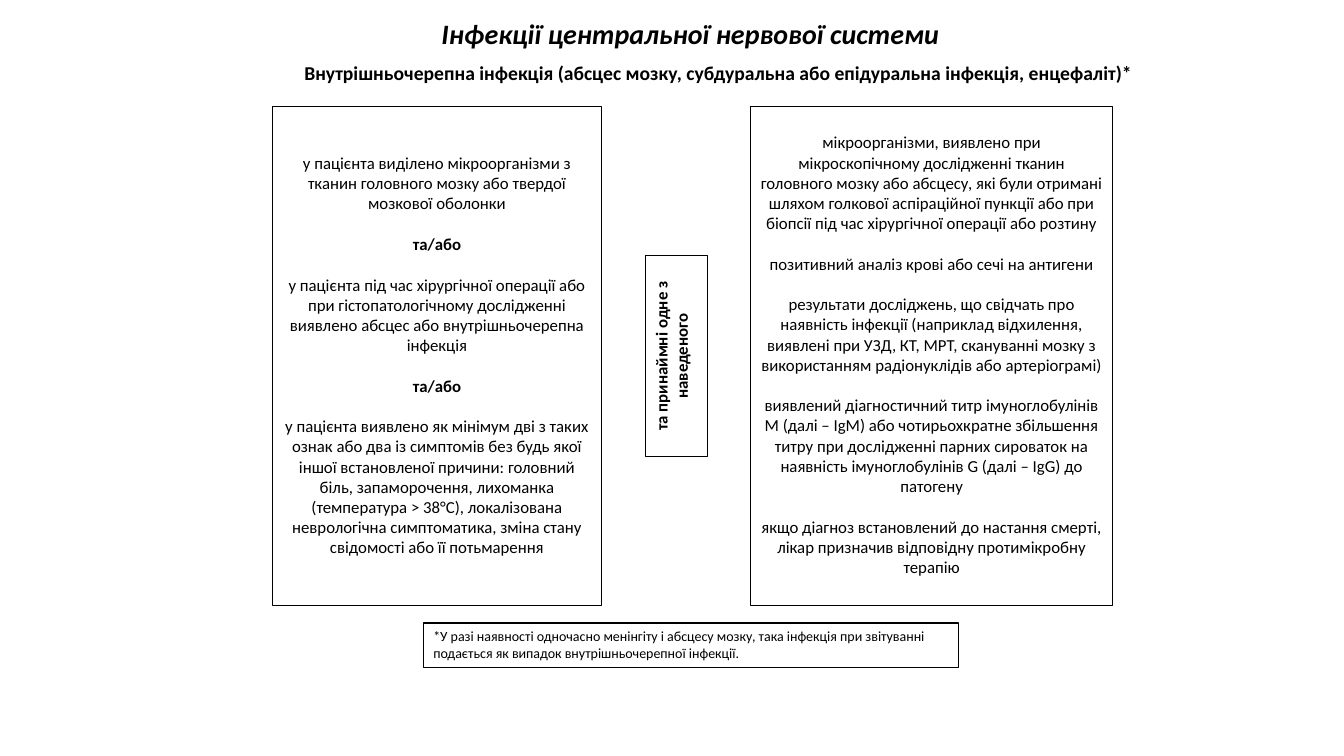
import pptx
import pptx.dml.color
import pptx.enum.shapes
import pptx.enum.text
import pptx.util

Cm = pptx.util.Cm
Pt = pptx.util.Pt
ALIGN = pptx.enum.text.PP_ALIGN
BLACK = pptx.dml.color.RGBColor(0, 0, 0)
FONT = "Calibri"
AND_OR = "та/або"
COLUMN_TOP, COLUMN_HEIGHT = 2.69, 12.57

PATIENT_CRITERIA = [
    "у пацієнта виділено мікроорганізми з тканин головного мозку або твердої мозкової оболонки",
    AND_OR,
    "у пацієнта під час хірургічної операції або при гістопатологічному дослідженні "
    "виявлено абсцес або внутрішньочерепна інфекція",
    AND_OR,
    "у пацієнта виявлено як мінімум дві з таких ознак або два із симптомів без будь якої "
    "іншої встановленої причини: головний біль, запаморочення, лихоманка "
    "(температура > 38°С), локалізована неврологічна симптоматика, зміна стану "
    "свідомості або її потьмарення",
]
LAB_CRITERIA = [
    "мікроорганізми, виявлено при мікроскопічному дослідженні тканин головного мозку або "
    "абсцесу, які були отримані шляхом голкової аспіраційної пункції або при біопсії під час "
    "хірургічної операції або розтину",
    "позитивний аналіз крові або сечі на антигени",
    "результати досліджень, що свідчать про наявність інфекції (наприклад відхилення, "
    "виявлені при УЗД, КТ, МРТ, скануванні мозку з використанням радіонуклідів або артеріограмі)",
    "виявлений діагностичний титр імуноглобулінів М (далі – IgM) або чотирьохкратне "
    "збільшення титру при дослідженні парних сироваток на наявність імуноглобулінів G "
    "(далі – IgG) до патогену",
    "якщо діагноз встановлений до настання смерті, лікар призначив відповідну "
    "протимікробну терапію",
]
LINK = "та принаймні одне з наведеного"
TITLE = "Інфекції центральної нервової системи"
SUBTITLE = ("Внутрішньочерепна інфекція (абсцес мозку, субдуральна або епідуральна "
            "інфекція, енцефаліт)*")
FOOTNOTE = ("*У разі наявності одночасно менінгіту і абсцесу мозку, така інфекція при "
            "звітуванні подається як випадок внутрішньочерепної інфекції.")


def write(box, texts, size, bold=False, italic=False, align=ALIGN.CENTER):
    """Fill the box with paragraphs one line apart."""
    frame = box.text_frame
    frame.word_wrap = True
    frame.vertical_anchor = pptx.enum.text.MSO_ANCHOR.TOP
    frame.text = "\n".join(texts)
    for index, para in enumerate(frame.paragraphs):
        para.alignment = align
        if index:
            para.space_before = Pt(14.6)
        font = para.runs[0].font
        font.name = FONT
        font.size = Pt(size)
        font.bold = bold or para.text == AND_OR
        font.italic = italic
        font.color.rgb = BLACK


def add_frame(left, top, width, height):
    """Add an unfilled rectangle with a thin black outline."""
    box = page.shapes.add_shape(pptx.enum.shapes.MSO_SHAPE.RECTANGLE,
                                Cm(left), Cm(top), Cm(width), Cm(height))
    box.shadow.inherit = False
    box.fill.background()
    box.line.color.rgb = BLACK
    box.line.width = Pt(0.75)
    return box


deck = pptx.Presentation()
deck.slide_width = Cm(33.87)
deck.slide_height = Cm(19.05)
page = deck.slides.add_slide(deck.slide_layouts[6])

for left, width, inset, criteria in [
    (6.86, 8.31, 1.16, PATIENT_CRITERIA),
    (18.92, 9.12, 0.64, LAB_CRITERIA),
]:
    column = add_frame(left, COLUMN_TOP, width, COLUMN_HEIGHT)
    column.text_frame.margin_top = Cm(inset)
    write(column, criteria, 12)

link = add_frame(16.28, 6.45, 1.55, 5.05)
link.element.txBody.bodyPr.set("vert", "vert270")
write(link, [LINK], 12, bold=True)

for text, left, top, width, height, size, italic in [
    (TITLE, 4.75, 0.3, 25.3, 1.12, 20, True),
    (SUBTITLE, 6.86, 1.4, 22.5, 0.86, 14, False),
]:
    heading = page.shapes.add_textbox(Cm(left), Cm(top), Cm(width), Cm(height))
    write(heading, [text], size, bold=True, italic=italic)

footnote = add_frame(10.67, 15.7, 13.49, 1.12)
write(footnote, [FOOTNOTE], 10, align=ALIGN.LEFT)

deck.save("out.pptx")
